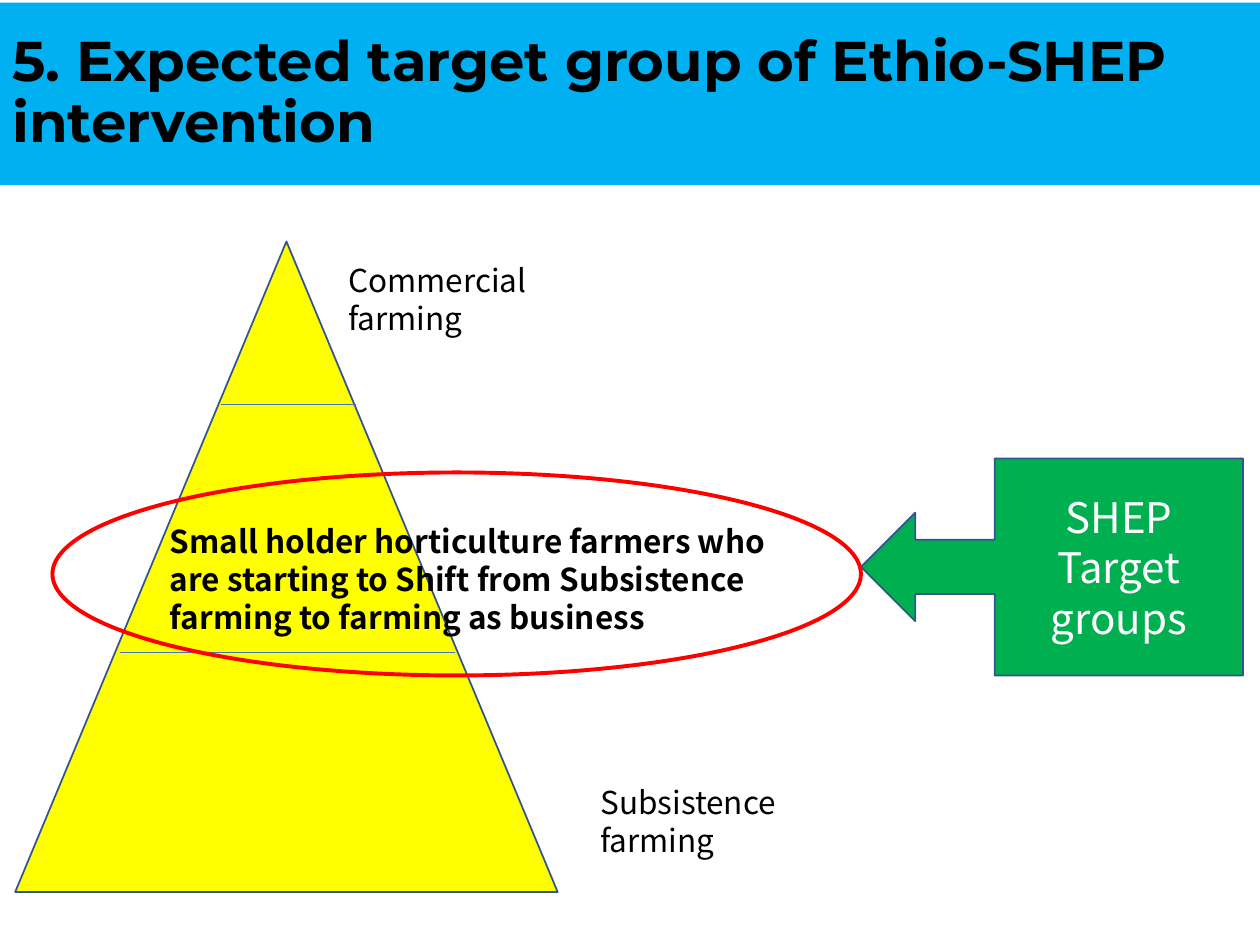
from lxml import etree
from pptx import Presentation
from pptx.dml.color import RGBColor
from pptx.enum.shapes import MSO_CONNECTOR, MSO_SHAPE
from pptx.enum.text import MSO_ANCHOR, PP_ALIGN
from pptx.oxml.ns import qn
from pptx.util import Pt

RECTANGLE = MSO_SHAPE.RECTANGLE
TRIANGLE = MSO_SHAPE.ISOSCELES_TRIANGLE
CALLOUT = MSO_SHAPE.LEFT_ARROW_CALLOUT
OVAL = MSO_SHAPE.OVAL
STRAIGHT = MSO_CONNECTOR.STRAIGHT
MIDDLE = MSO_ANCHOR.MIDDLE
LEFT, CENTER = PP_ALIGN.LEFT, PP_ALIGN.CENTER

TITLE_FONT = "Montserrat"
BODY_FONT = "Noto Sans CJK JP"
BLACK, WHITE = "000000", "FFFFFF"
OUTLINE = "325491"


def color(hex_value):
    return RGBColor.from_string(hex_value)


def add_figure(slide, preset, box, fill=None, line=None, line_width=1):
    """Add a preset shape; without fill or line that part is left empty."""
    figure = slide.shapes.add_shape(preset, *map(Pt, box))
    figure.shadow.inherit = False
    if fill:
        figure.fill.solid()
        figure.fill.fore_color.rgb = color(fill)
    else:
        figure.fill.background()
    if line:
        figure.line.color.rgb = color(line)
        figure.line.width = Pt(line_width)
    else:
        figure.line.fill.background()
    return figure


def write(holder, text, size, font=BODY_FONT, text_color=BLACK, bold=False, align=LEFT):
    holder.text_frame.word_wrap = True
    paragraph = holder.text_frame.paragraphs[0]
    paragraph.text = text
    paragraph.alignment = align
    paragraph.font.name = font
    paragraph.font.size = Pt(size)
    paragraph.font.bold = bold
    paragraph.font.color.rgb = color(text_color)
    return paragraph


def add_label(slide, box, text, bold=False):
    write(slide.shapes.add_textbox(*map(Pt, box)), text, 18, bold=bold)


def add_tier_line(slide, left, right, y):
    tier = slide.shapes.add_connector(STRAIGHT, Pt(left), Pt(y), Pt(right), Pt(y))
    tier.line.color.rgb = color("4472C4")
    tier.line.width = Pt(0.5)
    etree.SubElement(tier._element.spPr, qn("a:effectLst"))


def add_title(slide):
    banner = add_figure(slide, RECTANGLE, (0, 1.5, 720, 104.3), fill="00B0F0")
    banner.text_frame.vertical_anchor = MIDDLE
    title = write(banner, "5. Expected target group of Ethio-SHEP intervention",
                  32, font=TITLE_FONT, bold=True)
    title.line_spacing = 0.9


def add_pyramid(slide):
    add_figure(slide, TRIANGLE, (8.7, 138, 310, 371.7), fill="FFFF00", line=OUTLINE)
    add_tier_line(slide, 68.4, 260, 373)
    add_tier_line(slide, 126, 203.6, 231.2)


def add_target_callout(slide):
    callout = add_figure(slide, CALLOUT, (492, 262, 218.3, 124), fill="00B050", line=OUTLINE)
    callout.text_frame.vertical_anchor = MIDDLE
    write(callout, "SHEP Target groups", 24, text_color=WHITE, align=CENTER)


def main():
    prs = Presentation()
    prs.slide_width, prs.slide_height = Pt(720), Pt(540)
    slide = prs.slides.add_slide(prs.slide_layouts[6])

    add_title(slide)
    add_pyramid(slide)
    add_label(slide, (336, 444, 180, 51), "Subsistence farming")
    add_label(slide, (192, 145.5, 180, 51), "Commercial farming")
    add_label(slide, (90, 295, 384, 72.7),
              "Small holder horticulture farmers who are starting to Shift from "
              "Subsistence farming to farming as business", bold=True)
    add_target_callout(slide)
    add_figure(slide, OVAL, (30, 270, 462, 116), line="FF0000", line_width=2.25)

    prs.save("out.pptx")


if __name__ == "__main__":
    main()
